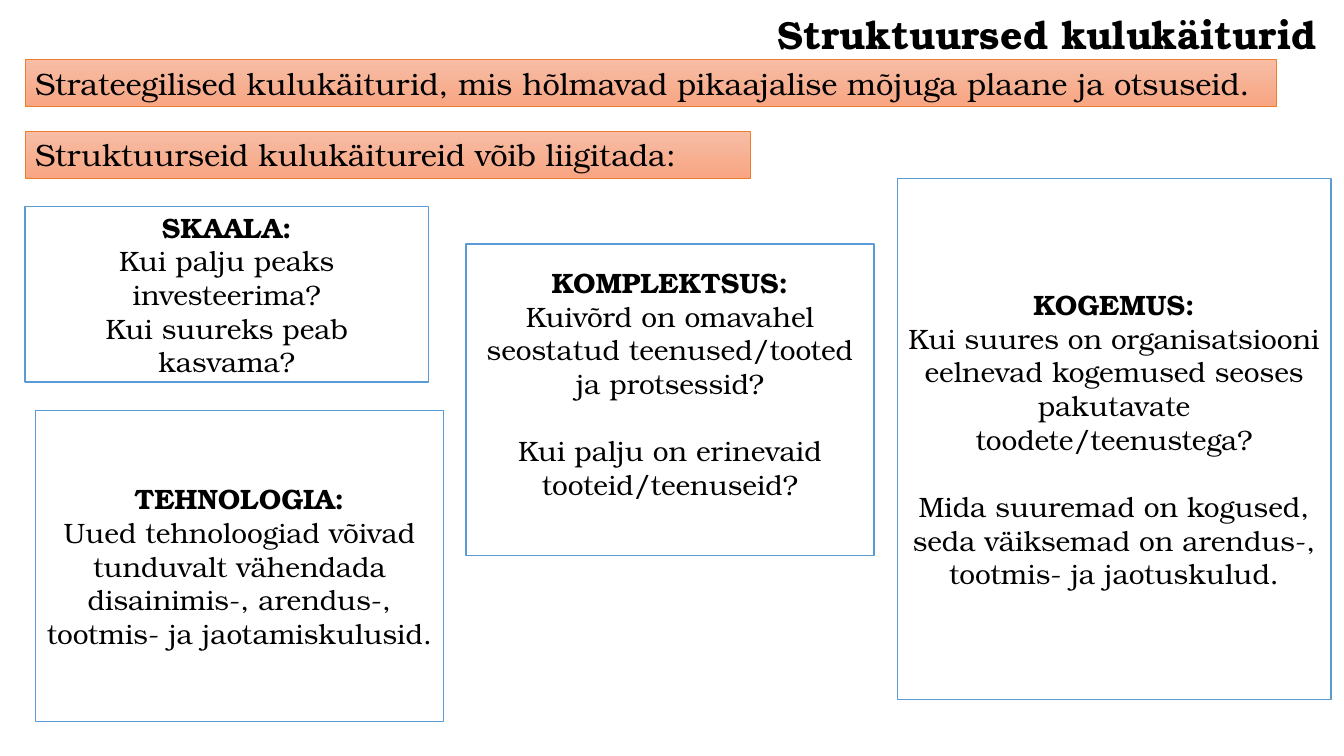
from pptx import Presentation
from pptx.dml.color import RGBColor
from pptx.enum.shapes import MSO_SHAPE
from pptx.enum.text import MSO_ANCHOR, MSO_AUTO_SIZE, PP_ALIGN
from pptx.util import Inches, Pt

RECT = MSO_SHAPE.RECTANGLE
TOP, MIDDLE = MSO_ANCHOR.TOP, MSO_ANCHOR.MIDDLE
CENTER, JUSTIFY = PP_ALIGN.CENTER, PP_ALIGN.JUSTIFY
FIT_SHAPE = MSO_AUTO_SIZE.SHAPE_TO_FIT_TEXT

# Content
FONT = "TeX Gyre Bonum"
BLACK, WHITE, BLUE, ORANGE = "000000", "FFFFFF", "5B9BD5", "ED7D31"
BANNER_FADE = ("F7BDA5", "F8A582")
LINE_GAP = 24  # points, one line of card text

TITLE = "Struktuursed kulukäiturid"
BANNERS = [  # text, (left, top, width, height)
    ("Strateegilised kulukäiturid, mis hõlmavad pikaajalise mõjuga plaane ja otsuseid.",
     (0.25, 0.59, 12.41, 0.47)),
    ("Struktuurseid kulukäitureid võib liigitada:", (0.25, 1.3, 7.19, 0.47)),
]
CARDS = [  # heading, [(text, space before)], box, bottom inset
    ("SKAALA:",
     [("Kui palju peaks investeerima?", 0), ("Kui suureks peab kasvama?", 0)],
     (0.25, 2.05, 4, 1.74), 0.05),
    ("KOGEMUS:",
     [("Kui suures on organisatsiooni eelnevad kogemused seoses pakutavate "
       "toodete/teenustega?", 0),
      ("Mida suuremad on kogused, seda väiksemad on arendus-, tootmis- ja "
       "jaotuskulud.", LINE_GAP)],
     (8.9, 1.77, 4.3, 5.17), 0.05),
    ("TEHNOLOGIA:",
     [("Uued tehnoloogiad võivad tunduvalt vähendada disainimis-, arendus-, "
       "tootmis- ja jaotamiskulusid.", 0)],
     (0.35, 4.07, 4.05, 3.09), 0.05),
    ("KOMPLEKTSUS:",
     [("Kuivõrd on omavahel seostatud teenused/tooted ja protsessid?", 0),
      ("Kui palju on erinevaid tooteid/teenuseid?", LINE_GAP)],
     (4.62, 2.42, 4.05, 3.09), 0.38),
]


def rgb(hex_color):
    return RGBColor.from_string(hex_color)


def write(p, text, size, align, bold=False, before=0):
    p.alignment = align
    p.space_before = Pt(before)
    r = p.add_run()
    r.text = text
    r.font.name, r.font.size, r.font.bold = FONT, Pt(size), bold
    r.font.color.rgb = rgb(BLACK)


def add_box(s, box, line, width, anchor):
    sp = s.shapes.add_shape(RECT, *map(Inches, box))
    sp.shadow.inherit = False
    sp.line.color.rgb = rgb(line)
    sp.line.width = Pt(width)
    sp.text_frame.word_wrap = True
    sp.text_frame.vertical_anchor = anchor
    return sp


prs = Presentation()
prs.slide_width, prs.slide_height = Inches(13.33), Inches(7.5)
s = prs.slides.add_slide(prs.slide_layouts[5])

# Title
title = s.shapes.title
title.left, title.top, title.width, title.height = map(Inches, (7.61, 0.05, 5.59, 0.57))
tf = title.text_frame
tf.word_wrap = False
tf.auto_size = FIT_SHAPE
tf.vertical_anchor = TOP
write(tf.paragraphs[0], TITLE, 28, JUSTIFY, bold=True)

# Banners with a top-to-bottom fade
for text, box in BANNERS:
    sp = add_box(s, box, ORANGE, 0.5, TOP)
    sp.fill.gradient()
    sp.fill.gradient_angle = 270
    for stop, color in zip(sp.fill.gradient_stops, BANNER_FADE):
        stop.color.rgb = rgb(color)
    sp.text_frame.auto_size = FIT_SHAPE
    write(sp.text_frame.paragraphs[0], text, 22, JUSTIFY)

# Cost driver cards
for heading, body, box, bottom in CARDS:
    sp = add_box(s, box, BLUE, 1, MIDDLE)
    sp.fill.solid()
    sp.fill.fore_color.rgb = rgb(WHITE)
    tf = sp.text_frame
    tf.margin_bottom = Inches(bottom)
    write(tf.paragraphs[0], heading, 20, CENTER, bold=True)
    for text, before in body:
        write(tf.add_paragraph(), text, 20, CENTER, before=before)

prs.save("out.pptx")
